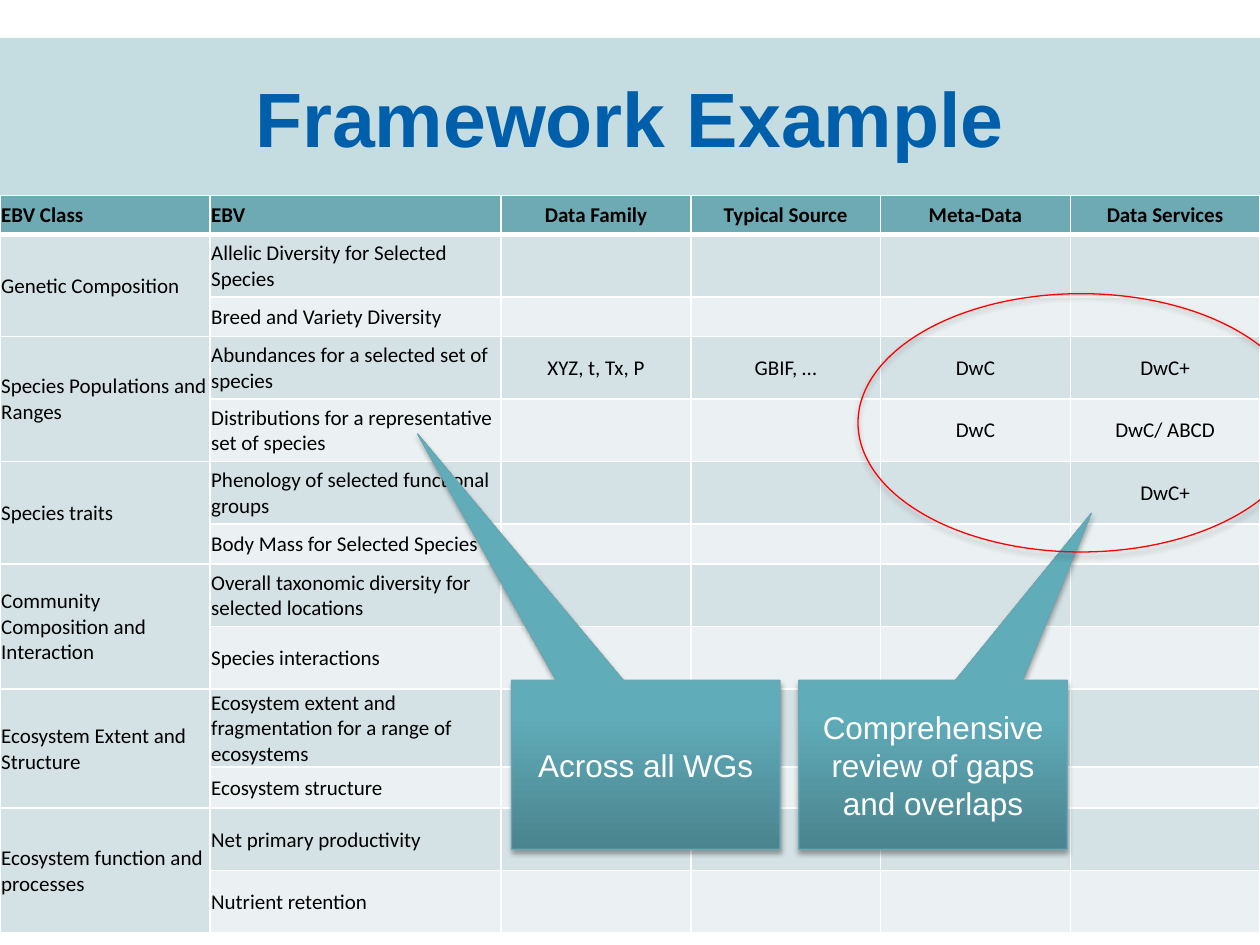
from copy import deepcopy
from dataclasses import dataclass

from lxml import etree
from pptx import Presentation
from pptx.dml.color import RGBColor
from pptx.enum.shapes import MSO_SHAPE
from pptx.enum.text import MSO_ANCHOR, PP_ALIGN
from pptx.oxml.ns import qn
from pptx.util import Pt

LEFT, CENTER = PP_ALIGN.LEFT, PP_ALIGN.CENTER
MIDDLE = MSO_ANCHOR.MIDDLE
RECTANGLE, OVAL = MSO_SHAPE.RECTANGLE, MSO_SHAPE.OVAL
CALLOUT = MSO_SHAPE.RECTANGULAR_CALLOUT


@dataclass(frozen=True)
class Theme:
    title_fill: str = "C5DDE1"
    title_text: str = "005FAA"
    header: str = "6EAAB4"
    bands: tuple = ("D5E2E5", "EBF1F2")
    white: str = "FFFFFF"
    black: str = "000000"
    ring: str = "FF0000"
    callout_line: str = "6AA7B2"
    callout_stops: tuple = ((0, "4A848E"), (0.8, "60ACB9"), (1, "5FAEBB"))
    title_size: int = 44
    callout_size: int = 18
    table_size: int = 12
    heading_font: str = "Arial"
    table_font: str = "Calibri"


theme = Theme()


def write_text(frame, text, *, size, font, color, bold=False, align=CENTER):
    frame.word_wrap = True
    paragraph = frame.paragraphs[0]
    paragraph.alignment = align
    if not text:
        etree.SubElement(paragraph._p, qn("a:endParaRPr"), sz=str(size * 100))
        return
    run = paragraph.add_run()
    run.text = text
    run.font.size = Pt(size)
    run.font.name = font
    run.font.bold = bold
    run.font.color.rgb = RGBColor.from_string(color)


def outline_with_shadow(shape, color):
    shape.line.color.rgb = RGBColor.from_string(color)
    shape.line.width = Pt(0.75)
    shape.shadow.inherit = False
    effects = shape._element.spPr.find(qn("a:effectLst"))
    shadow = etree.SubElement(effects, qn("a:outerShdw"), blurRad=str(Pt(3.1)),
                              dist=str(Pt(1.8)), dir="5400000", rotWithShape="0")
    tone = etree.SubElement(shadow, qn("a:srgbClr"), val=theme.black)
    etree.SubElement(tone, qn("a:alpha"), val="35000")


deck = Presentation()
deck.slide_width, deck.slide_height = Pt(720), Pt(540)
slide = deck.slides.add_slide(deck.slide_layouts[6])

title = slide.shapes.add_shape(RECTANGLE, Pt(0), Pt(21.6), Pt(720), Pt(90))
title.shadow.inherit = False
title.fill.solid()
title.fill.fore_color.rgb = RGBColor.from_string(theme.title_fill)
title.line.fill.background()
title.text_frame.vertical_anchor = MIDDLE
write_text(title.text_frame, "Framework Example", size=theme.title_size,
           font=theme.heading_font, color=theme.title_text, bold=True)

headings = ["EBV Class", "EBV", "Data Family", "Typical Source", "Meta-Data", "Data Services"]
classes = [
    ("Genetic Composition",
     ["Allelic Diversity for Selected Species"],
     ["Breed and Variety Diversity"]),
    ("Species Populations and Ranges",
     ["Abundances for a selected set of species", "XYZ, t, Tx, P", "GBIF, …", "DwC", "DwC+"],
     ["Distributions for a representative set of species", "", "", "DwC", "DwC/ ABCD"]),
    ("Species traits",
     ["Phenology of selected functional groups", "", "", "", "DwC+"],
     ["Body Mass for Selected Species"]),
    ("Community Composition and Interaction",
     ["Overall taxonomic diversity for selected locations"],
     ["Species interactions"]),
    ("Ecosystem Extent and Structure",
     ["Ecosystem extent and fragmentation for a range of ecosystems"],
     ["Ecosystem structure"]),
    ("Ecosystem function and processes",
     ["Net primary productivity"],
     ["Nutrient retention"]),
]
rows = [headings]
for class_name, first, second in classes:
    rows += [[class_name] + first, [""] + second]

column_widths = [120, 166.4] + [108.4] * 4
row_heights = [22.5, 35.7, 22.5, 35.7, 35.7, 35.7, 23.1, 35.7, 35.7, 36.7, 23.4, 35.7, 35.7]
framework = slide.shapes.add_table(len(rows), len(headings), Pt(0), Pt(111.6),
                                   Pt(720), Pt(sum(row_heights))).table
for column, width in zip(framework.columns, column_widths):
    column.width = Pt(width)
for row, height in zip(framework.rows, row_heights):
    row.height = Pt(height)

for r, entries in enumerate(rows):
    for c in range(len(headings)):
        cell = framework.cell(r, c)
        cell.vertical_anchor = MIDDLE
        cell.margin_left = cell.margin_right = cell.margin_top = Pt(0.7)
        cell.margin_bottom = Pt(0)
        for side in "LRTB":
            thick = (r, side) in ((0, "B"), (1, "T"))
            border = etree.SubElement(cell._tc.get_or_add_tcPr(), qn(f"a:ln{side}"),
                                      w=str(Pt(3 if thick else 1)))
            paint = etree.SubElement(border, qn("a:solidFill"))
            etree.SubElement(paint, qn("a:srgbClr"), val=theme.white)
        band = 0 if c == 0 else (r - 1) % 2
        cell.fill.solid()
        cell.fill.fore_color.rgb = RGBColor.from_string(
            theme.header if r == 0 else theme.bands[band])
        write_text(cell.text_frame, entries[c] if c < len(entries) else "",
                   size=theme.table_size, font=theme.table_font, color=theme.black,
                   bold=r == 0, align=LEFT if c < 2 else CENTER)

for r in range(1, len(rows), 2):
    framework.cell(r, 0).merge(framework.cell(r + 1, 0))

annotations = [
    (CALLOUT, (456.5, 388.8, 153.4, 96.5), "Comprehensive review of gaps and overlaps", (0.59, -1.49)),
    (OVAL, (490.3, 167.8, 254.9, 147.6), "", ()),
    (CALLOUT, (292.3, 388.8, 153.4, 96.5), "Across all WGs", (-0.85, -1.96)),
]
for kind, box, message, pointer in annotations:
    annotation = slide.shapes.add_shape(kind, *map(Pt, box))
    if kind == OVAL:
        annotation.fill.background()
        outline_with_shadow(annotation, theme.ring)
        continue
    for index, offset in enumerate(pointer):
        annotation.adjustments[index] = offset
    annotation.fill.gradient()
    annotation.fill.gradient_angle = 90
    stop_list = annotation._element.spPr.find(qn("a:gradFill")).find(qn("a:gsLst"))
    stop_list.append(deepcopy(stop_list[-1]))
    for stop, (position, color) in zip(annotation.fill.gradient_stops, theme.callout_stops):
        stop.position = position
        stop.color.rgb = RGBColor.from_string(color)
    outline_with_shadow(annotation, theme.callout_line)
    annotation.text_frame.vertical_anchor = MIDDLE
    write_text(annotation.text_frame, message, size=theme.callout_size,
               font=theme.heading_font, color=theme.white)

deck.save("out.pptx")
